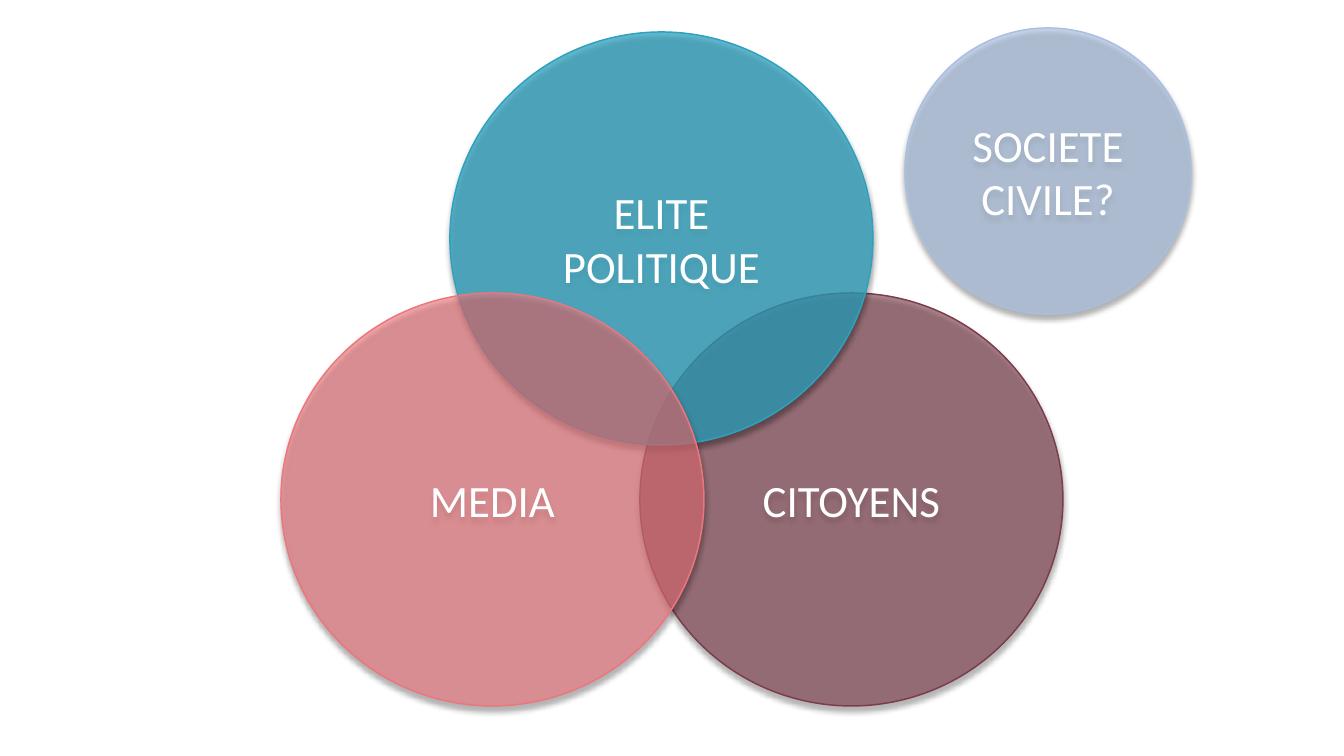
from dataclasses import dataclass

from lxml.etree import SubElement
from pptx import Presentation
from pptx.dml.color import RGBColor
from pptx.enum.shapes import MSO_SHAPE
from pptx.enum.text import MSO_ANCHOR, PP_ALIGN
from pptx.oxml.ns import qn
from pptx.util import Emu, Pt


@dataclass(frozen=True)
class Theme:
    font: str = "Calibri"
    text_size: float = 24
    text: str = "FFFFFF"
    line_width: float = 0.79
    plum: str = "7D3C4A"
    teal: str = "2DA2BF"
    rose: str = "EC767C"
    sky: str = "A8BFDF"
    shadow: str = "000000"
    shadow_opacity: int = 45
    shadow_blur: float = 3
    shadow_distance: float = 2.4


THEME = Theme()
SLIDE_SIZE = (1344, 756)
VENN_SIZE = (423, 413)
OUTSIDE_SIZE = (286, 286)

# label, left and top in px, size in px, colour, opacity in percent; back to front
CIRCLES = [
    ("CITOYENS", (640, 293), VENN_SIZE, THEME.plum, 61),
    ("ELITE POLITIQUE", (450, 32), VENN_SIZE, THEME.teal, 74),
    ("MEDIA", (281, 293), VENN_SIZE, THEME.rose, 63),
    ("SOCIETE CIVILE?", (905, 28), OUTSIDE_SIZE, THEME.sky, 63),
]


def px(length):
    return Emu(round(length * 914400 / 134.4))


def set_opacity(colour_element, percent):
    SubElement(colour_element, qn("a:alpha"), val=str(percent * 1000))


def add_shadow(shape):
    """Give the shape a soft shadow straight below it."""
    shape.shadow.inherit = False
    effects = shape._element.spPr.find(qn("a:effectLst"))
    shadow = SubElement(
        effects, qn("a:outerShdw"),
        blurRad=str(Pt(THEME.shadow_blur)), dist=str(Pt(THEME.shadow_distance)),
        dir="5400000", rotWithShape="0",
    )
    colour = SubElement(shadow, qn("a:srgbClr"), val=THEME.shadow)
    set_opacity(colour, THEME.shadow_opacity)


def add_circle(slide, label, position, size, colour, opacity):
    shape = slide.shapes.add_shape(
        MSO_SHAPE.OVAL, *(px(length) for length in position + size))
    shape.fill.solid()
    shape.fill.fore_color.rgb = RGBColor.from_string(colour)
    set_opacity(shape._element.spPr.find(qn("a:solidFill"))[0], opacity)
    shape.line.color.rgb = RGBColor.from_string(colour)
    shape.line.width = Pt(THEME.line_width)
    add_shadow(shape)

    frame = shape.text_frame
    frame.word_wrap = True
    frame.vertical_anchor = MSO_ANCHOR.MIDDLE
    paragraph = frame.paragraphs[0]
    paragraph.text = label
    paragraph.alignment = PP_ALIGN.CENTER
    paragraph.font.name = THEME.font
    paragraph.font.size = Pt(THEME.text_size)
    paragraph.font.color.rgb = RGBColor.from_string(THEME.text)


def main():
    presentation = Presentation()
    presentation.slide_width, presentation.slide_height = map(px, SLIDE_SIZE)
    slide = presentation.slides.add_slide(presentation.slide_layouts[6])
    for circle in CIRCLES:
        add_circle(slide, *circle)
    presentation.save("out.pptx")


if __name__ == "__main__":
    main()
